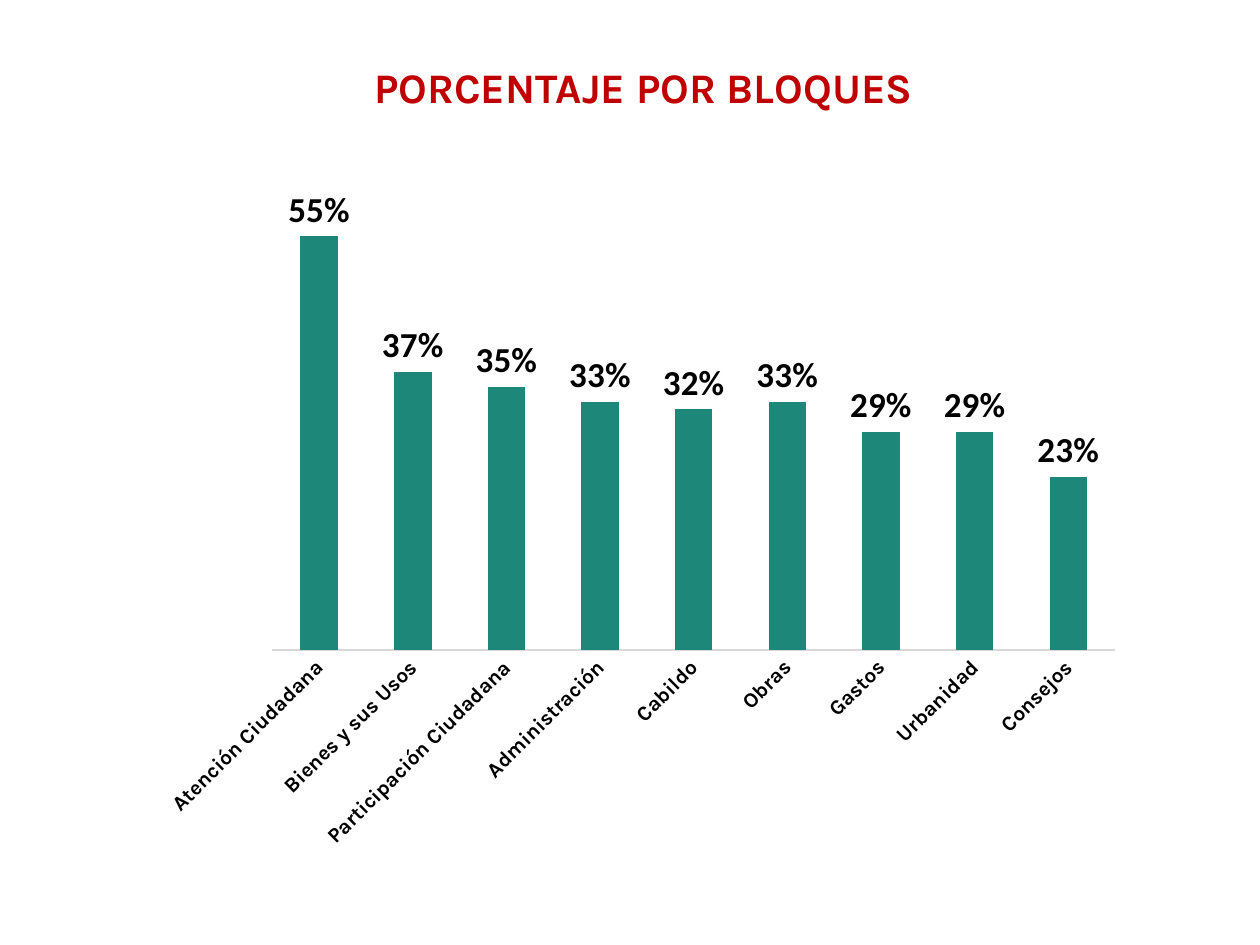
from dataclasses import dataclass

from lxml import etree
from pptx import Presentation
from pptx.chart.data import CategoryChartData
from pptx.dml.color import RGBColor
from pptx.enum.chart import XL_CHART_TYPE, XL_LABEL_POSITION, XL_TICK_MARK
from pptx.enum.text import MSO_ANCHOR, MSO_AUTO_SIZE, PP_ALIGN
from pptx.oxml.ns import qn
from pptx.util import Pt

COLUMNS = XL_CHART_TYPE.COLUMN_CLUSTERED
OUTSIDE = XL_LABEL_POSITION.OUTSIDE_END
NO_TICK = XL_TICK_MARK.NONE
TOP = MSO_ANCHOR.TOP
LEFT = PP_ALIGN.LEFT
NO_FIT = MSO_AUTO_SIZE.NONE
TITLE_ONLY = 5


@dataclass(frozen=True)
class Theme:
    title: RGBColor = RGBColor(0xC0, 0x00, 0x00)
    text: RGBColor = RGBColor(0x00, 0x00, 0x00)
    bar: RGBColor = RGBColor(0x1D, 0x87, 0x7A)
    axis: RGBColor = RGBColor(0xD9, 0xD9, 0xD9)
    heading_font: str = "Karla"
    chart_font: str = "Calibri"
    title_size: int = 24
    chart_size: int = 10
    category_size: int = 12
    label_size: int = 20


THEME = Theme()

BLOCKS = {
    "Atención Ciudadana": 0.55,
    "Bienes y sus Usos": 0.37,
    "Participación Ciudadana": 0.35,
    "Administración": 0.33,
    "Cabildo": 0.32,
    "Obras": 0.33,
    "Gastos": 0.29,
    "Urbanidad": 0.29,
    "Consejos": 0.23,
}


def style_font(font, size, color, name, bold=False):
    font.size = Pt(size)
    font.color.rgb = color
    font.name = name
    font.bold = bold


def set_plot_layout(chart, x, y, w, h):
    plot_area = chart._chartSpace.find(".//" + qn("c:plotArea"))
    for old in plot_area.findall(qn("c:layout")):
        plot_area.remove(old)
    layout = etree.Element(qn("c:layout"))
    manual = etree.SubElement(layout, qn("c:manualLayout"))
    settings = {"layoutTarget": "inner", "xMode": "edge", "yMode": "edge",
                "x": x, "y": y, "w": w, "h": h}
    for tag, value in settings.items():
        etree.SubElement(manual, qn(f"c:{tag}")).set("val", str(value))
    plot_area.insert(0, layout)


def add_title(slide, text, x, y, w, h):
    sp = slide.shapes.title
    sp.left, sp.top, sp.width, sp.height = Pt(x), Pt(y), Pt(w), Pt(h)
    tf = sp.text_frame
    tf.auto_size = NO_FIT
    tf.word_wrap = True
    tf.vertical_anchor = TOP
    p = tf.paragraphs[0]
    p.alignment = LEFT
    r = p.add_run()
    r.text = text
    style_font(r.font, THEME.title_size, THEME.title, THEME.heading_font, True)


def add_block_chart(slide, blocks, x, y, w, h):
    data = CategoryChartData(number_format="0%")
    data.categories = list(blocks)
    data.add_series("Series 1", list(blocks.values()))
    chart = slide.shapes.add_chart(COLUMNS, Pt(x), Pt(y), Pt(w), Pt(h), data).chart
    chart.has_title = False
    chart.has_legend = False
    style_font(chart.font, THEME.chart_size, THEME.text, THEME.chart_font)
    set_plot_layout(chart, 0.13, 0.02, 0.85, 0.67)

    plot = chart.plots[0]
    plot.gap_width = 150
    plot.overlap = -25
    plot.vary_by_categories = False
    fill = plot.series[0].format.fill
    fill.solid()
    fill.fore_color.rgb = THEME.bar

    plot.has_data_labels = True
    labels = plot.data_labels
    labels.show_value = True
    labels.number_format = "0%"
    labels.number_format_is_linked = False
    labels.position = OUTSIDE
    style_font(labels.font, THEME.label_size, THEME.text, THEME.chart_font, True)

    values = chart.value_axis
    values.minimum_scale = 0
    values.maximum_scale = 0.6
    values.has_major_gridlines = False
    values.visible = False

    categories = chart.category_axis
    categories.major_tick_mark = NO_TICK
    categories.minor_tick_mark = NO_TICK
    categories.format.line.color.rgb = THEME.axis
    categories.format.line.width = Pt(0.75)
    style_font(categories.tick_labels.font, THEME.category_size, THEME.text,
               THEME.heading_font, True)
    body = categories._element.find(qn("c:txPr")).find(qn("a:bodyPr"))
    body.set("rot", "-2700000")
    body.set("vert", "horz")


def main():
    prs = Presentation()
    prs.slide_width, prs.slide_height = Pt(720), Pt(540)
    slide = prs.slides.add_slide(prs.slide_layouts[TITLE_ONLY])
    add_title(slide, "PORCENTAJE POR BLOQUES", 206.6, 31.7, 345.6, 36)
    add_block_chart(slide, BLOCKS, 82, 105.8, 566.6, 385.2)
    prs.save("out.pptx")


if __name__ == "__main__":
    main()
